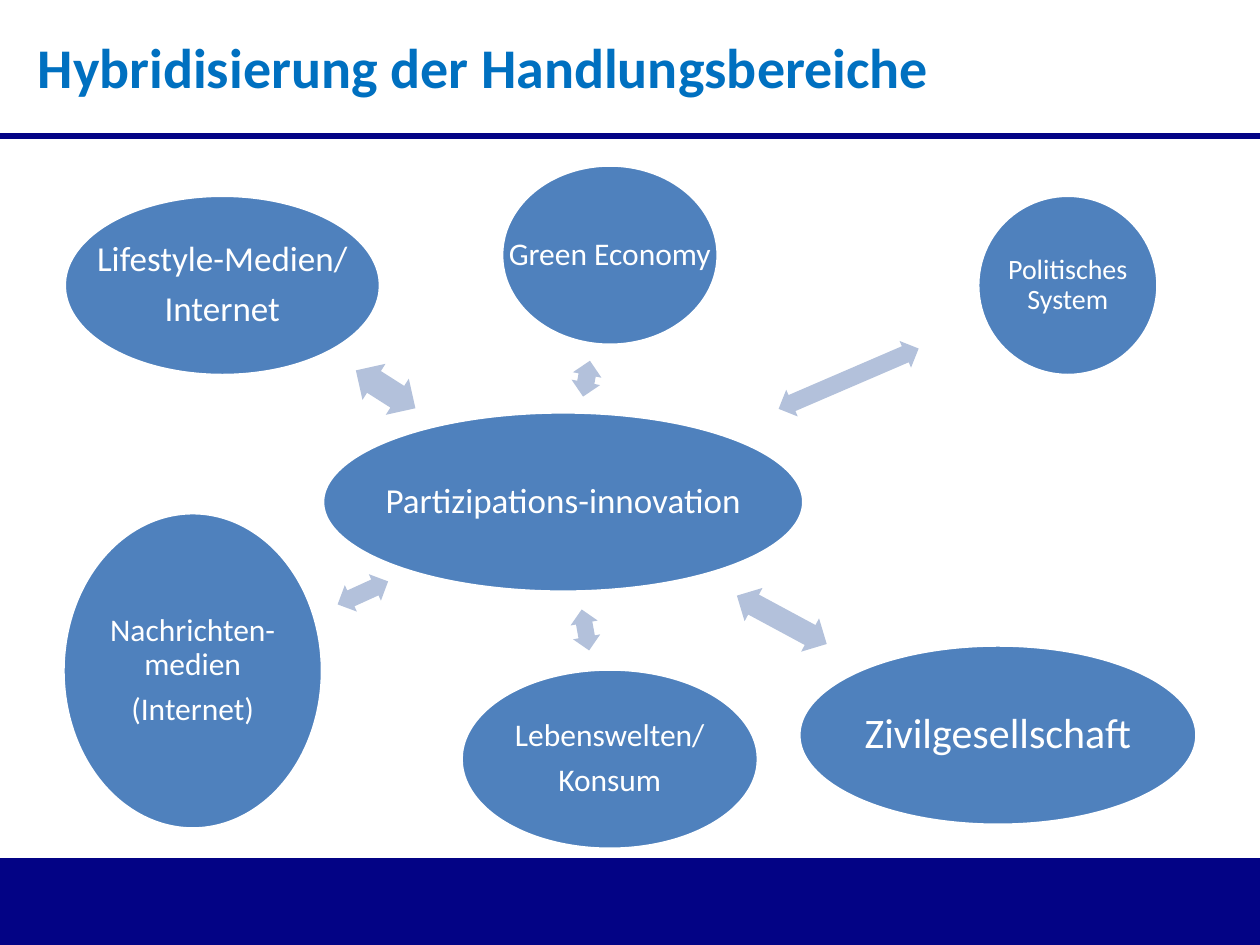
from lxml.etree import SubElement
from pptx import Presentation
from pptx.dml.color import RGBColor
from pptx.enum.shapes import MSO_CONNECTOR, MSO_SHAPE
from pptx.enum.text import MSO_ANCHOR as ANCHOR, MSO_AUTO_SIZE, PP_ALIGN as ALIGN
from pptx.oxml.ns import qn
from pptx.util import Pt

NAVY = RGBColor(0x03, 0x03, 0x85)
BLUE = RGBColor(0x4F, 0x81, 0xBD)
PALE = RGBColor(0xB3, 0xC1, 0xDB)
TITLE_BLUE = RGBColor(0x00, 0x70, 0xC0)
WHITE = RGBColor(0xFF, 0xFF, 0xFF)

WIDTH, HEIGHT = 720, 540
RULE_Y, FOOTER_Y = 77.8, 490.3
ROW_H = 103
TITLE = "Hybridisierung der Handlungsbereiche"

# lines, font size, (left, top, width, height), wrap
AREAS = [
    (["Partizipations-innovation"], 20, (184.3, 235.4, 275, ROW_H), False),
    (["Green Economy"], 18, (286.6, 94.3, 123.8, ROW_H), False),
    (["Politisches System"], 16, (558.7, 111.6, ROW_H, ROW_H), True),
    (["Zivilgesellschaft"], 24, (456.5, 368.6, 227.5, ROW_H), False),
    (["Lebenswelten/", "Konsum"], 18, (263.5, 382.3, 169.9, ROW_H), False),
    (["Nachrichten-medien", "(Internet)"], 18, (36, 293, 148.3, 180.7), True),
    (["Lifestyle-Medien/", "Internet"], 20, (36.7, 111.6, 180.7, ROW_H), False),
]

# (left, top, width, height), rotation
ARROWS = [
    ((324.7, 208.1, 20.9, 16.6), 280.8),
    ((441.4, 208.1, 87.1, 16.6), 336.7),
    ((417.6, 343.4, 58.3, 21.6), 28.3),
    ((322.6, 352.1, 23.8, 15.8), 79.7),
    ((191.5, 330.5, 31.7, 16.6), 155.5),
    ((200.2, 210.2, 40.3, 24.5), 212.5),
]


def write(sp, lines, size, color, bold=False, align=ALIGN.CENTER, anchor=ANCHOR.MIDDLE,
          margins=(2, 2), wrap=False, line_spacing=1.0, after=0):
    tf = sp.text_frame
    tf.auto_size = MSO_AUTO_SIZE.NONE
    tf.word_wrap = wrap
    tf.vertical_anchor = anchor
    tf.margin_left = tf.margin_right = Pt(margins[0])
    tf.margin_top = tf.margin_bottom = Pt(margins[1])
    for i, line in enumerate(lines):
        p = tf.add_paragraph() if i else tf.paragraphs[0]
        p.alignment = align
        p.line_spacing = line_spacing
        p.space_before, p.space_after = Pt(0), Pt(after)
        r = p.add_run()
        r.text = line
        r.font.name, r.font.size, r.font.bold = "Calibri", Pt(size), bold
        r.font.color.rgb = color


def add_shape(slide, kind, box, fill, outline=None):
    sp = slide.shapes.add_shape(kind, *map(Pt, box))
    sp.shadow.inherit = False
    sp.fill.solid()
    sp.fill.fore_color.rgb = fill
    if outline is None:
        sp.line.fill.background()
    else:
        sp.line.color.rgb = outline
        sp.line.width = Pt(2)
    return sp


def main():
    prs = Presentation()
    prs.slide_width, prs.slide_height = Pt(WIDTH), Pt(HEIGHT)
    slide = prs.slides.add_slide(prs.slide_layouts[5])

    title = slide.shapes.title
    title.left, title.top, title.width, title.height = map(Pt, (14.4, 15.1, 527.8, 46.1))
    write(title, [TITLE], 32, TITLE_BLUE, bold=True, align=ALIGN.LEFT,
          anchor=ANCHOR.TOP, margins=(7.2, 3.6))

    add_shape(slide, MSO_SHAPE.RECTANGLE, (0, FOOTER_Y, WIDTH, HEIGHT - FOOTER_Y), NAVY)
    rule = slide.shapes.add_connector(MSO_CONNECTOR.STRAIGHT, Pt(0), Pt(RULE_Y), Pt(WIDTH), Pt(RULE_Y))
    rule.line.color.rgb = NAVY
    rule.line.width = Pt(3)
    SubElement(rule._element.spPr, qn("a:effectLst"))

    for lines, size, box, wrap in AREAS:
        sp = add_shape(slide, MSO_SHAPE.OVAL, box, BLUE, WHITE)
        write(sp, lines, size, WHITE, wrap=wrap, line_spacing=0.9, after=round(0.35 * size, 1))

    for box, rotation in ARROWS:
        sp = add_shape(slide, MSO_SHAPE.LEFT_RIGHT_ARROW, box, PALE)
        sp.rotation = rotation
        sp.adjustments[0] = 0.6

    prs.save("out.pptx")


if __name__ == "__main__":
    main()
